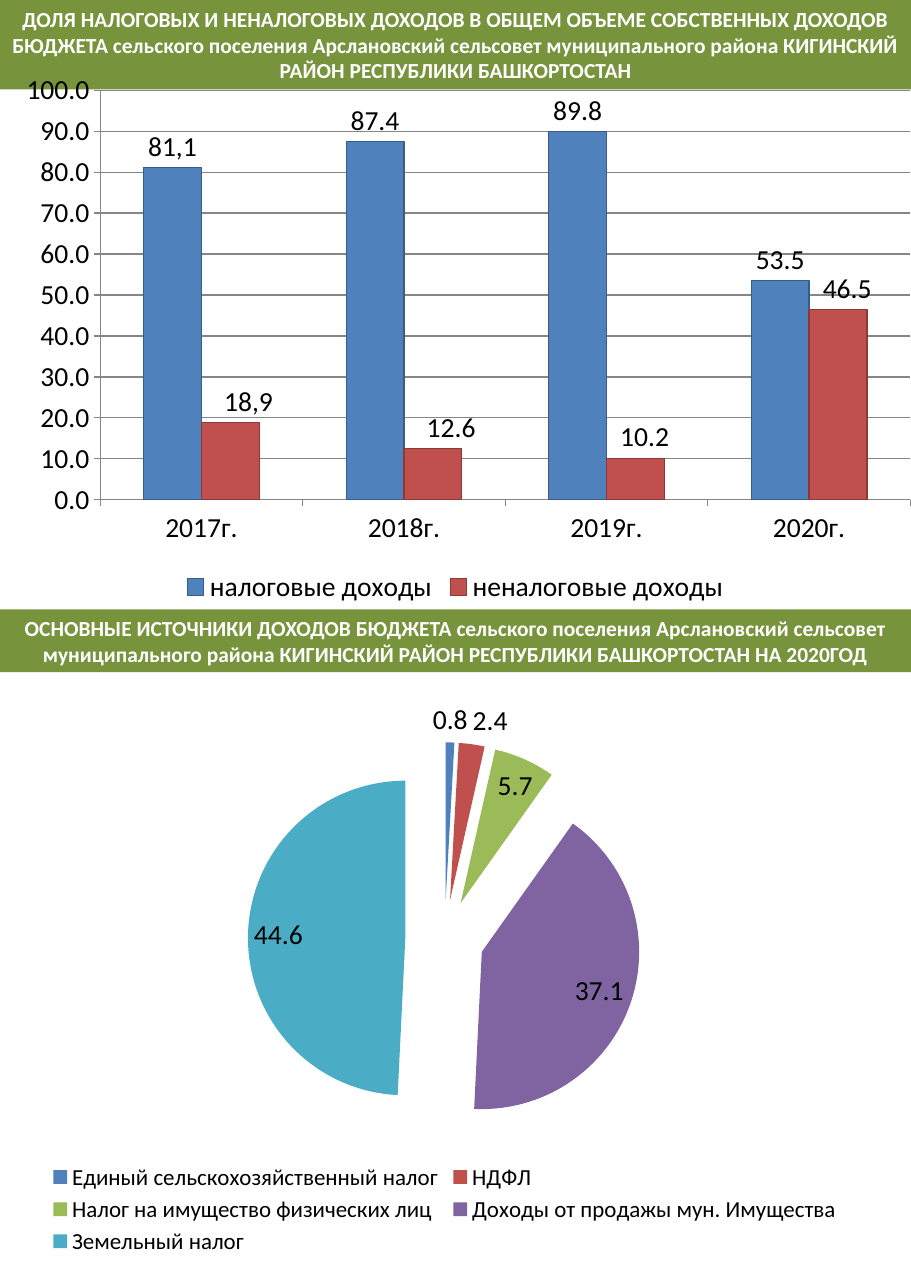
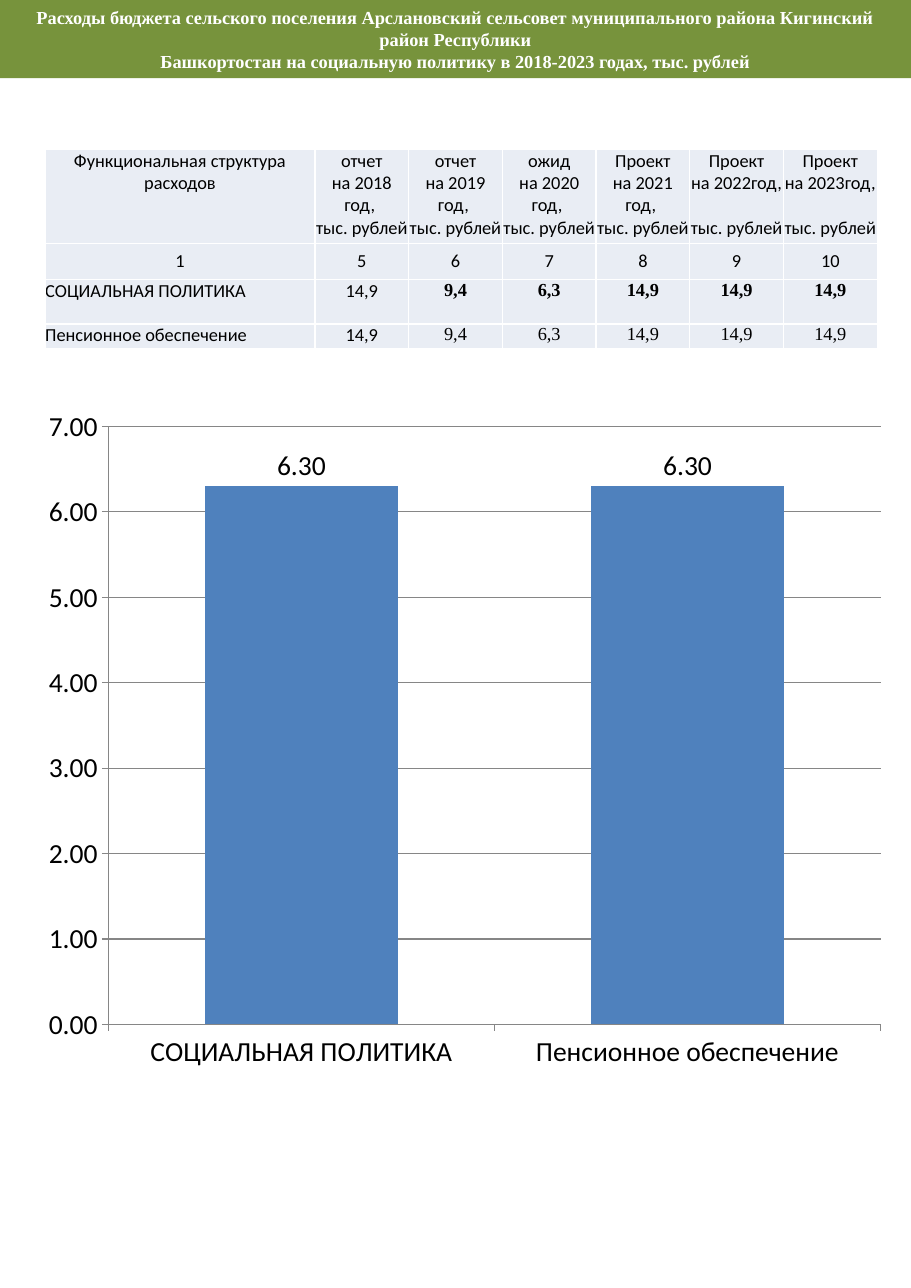
from copy import deepcopy

from pptx import Presentation
from pptx.chart.data import CategoryChartData
from pptx.dml.color import RGBColor
from pptx.enum.chart import XL_CHART_TYPE, XL_LABEL_POSITION, XL_LEGEND_POSITION
from pptx.enum.shapes import MSO_SHAPE
from pptx.enum.text import MSO_ANCHOR, MSO_AUTO_SIZE, PP_ALIGN
from pptx.oxml import parse_xml
from pptx.oxml.ns import nsdecls, qn
from pptx.util import Cm, Pt

BAND = "77933C"
WHITE = "FFFFFF"
BLACK = "000000"
GRID = "868686"
CELL = "E9EDF4"
BLUE = "4F81BD"
RED = "C0504D"
SANS = "Calibri"
SERIF = "Times New Roman"


def paint(fill, color):
    fill.solid()
    fill.fore_color.rgb = RGBColor.from_string(color)


def write_text(text_frame, text, size=12, font=SANS, color=BLACK, bold=False, align=PP_ALIGN.CENTER):
    text_frame.text = text
    for paragraph in text_frame.paragraphs:
        paragraph.alignment = align
        for run in paragraph.runs:
            run.font.size = Pt(size)
            run.font.name = font
            run.font.bold = bold
            paint(run.font.fill, color)
        for line_break in paragraph._p.findall(qn("a:br")):
            line_break.insert(0, deepcopy(paragraph.runs[0]._r.rPr))


presentation = Presentation()
presentation.slide_width = Cm(21)
presentation.slide_height = Cm(29.7)
title_only = presentation.slide_layouts[5]
income_slide = presentation.slides.add_slide(title_only)
spending_slide = presentation.slides.add_slide(title_only)

income_title = (
    "ДОЛЯ НАЛОГОВЫХ И НЕНАЛОГОВЫХ ДОХОДОВ В ОБЩЕМ ОБЪЕМЕ СОБСТВЕННЫХ ДОХОДОВ БЮДЖЕТА "
    "сельского поселения Арслановский сельсовет муниципального района "
    "КИГИНСКИЙ РАЙОН РЕСПУБЛИКИ БАШКОРТОСТАН"
)
sources_title = (
    "ОСНОВНЫЕ ИСТОЧНИКИ ДОХОДОВ БЮДЖЕТА сельского поселения Арслановский сельсовет "
    "муниципального района КИГИНСКИЙ РАЙОН РЕСПУБЛИКИ БАШКОРТОСТАН НА 2020ГОД"
)
spending_title = (
    "Расходы бюджета сельского поселения Арслановский сельсовет муниципального района "
    "Кигинский район Республики\n"
    "Башкортостан на социальную политику в 2018-2023 годах, тыс. рублей"
)
sources_band = income_slide.shapes.add_shape(MSO_SHAPE.RECTANGLE, 0, 0, Cm(21), Cm(1.45))
sources_band.shadow.inherit = False
sources_band.line.fill.background()

bands = [
    (income_slide.shapes.title, 0, 2.06, income_title, 14, SANS),
    (sources_band, 14.05, 1.45, sources_title, 14, SANS),
    (spending_slide.shapes.title, 0, 1.8, spending_title, 12, SERIF),
]
for shape, top, height, text, size, font in bands:
    shape.left, shape.top, shape.width, shape.height = 0, Cm(top), Cm(21), Cm(height)
    paint(shape.fill, BAND)
    text_frame = shape.text_frame
    text_frame.word_wrap = True
    text_frame.auto_size = MSO_AUTO_SIZE.NONE
    text_frame.vertical_anchor = MSO_ANCHOR.MIDDLE
    write_text(text_frame, text, size=size, font=font, color=WHITE, bold=True)

income_data = CategoryChartData(number_format="#,##0.0")
income_data.categories = ["2017г.", "2018г.", "2019г.", "2020г."]
income_data.add_series("налоговые доходы", [81.1, 87.4, 89.8, 53.5])
income_data.add_series("неналоговые доходы", [18.9, 12.6, 10.2, 46.5])

sources_data = CategoryChartData(number_format="General")
sources_data.categories = [
    "Единый сельскохозяйственный налог",
    "НДФЛ",
    "Налог на имущество физических лиц",
    "Доходы от продажы мун. Имущества",
    "Земельный налог",
]
sources_data.add_series("Доходы", [0.8, 2.4, 5.7, 37.1, 44.6])

spending_data = CategoryChartData(number_format="#,##0.00")
spending_data.categories = ["СОЦИАЛЬНАЯ ПОЛИТИКА", "Пенсионное обеспечение"]
spending_data.add_series("Расходы", [6.3, 6.3])

chart_places = [
    (income_slide, XL_CHART_TYPE.COLUMN_CLUSTERED, (0, 1.45, 21, 12.6), income_data),
    (income_slide, XL_CHART_TYPE.PIE, (0, 15.85, 20.5, 13.2), sources_data),
    (spending_slide, XL_CHART_TYPE.COLUMN_CLUSTERED, (0.7, 9.2, 20, 15.85), spending_data),
]
charts = []
for slide, chart_type, place, data in chart_places:
    chart = slide.shapes.add_chart(chart_type, *[Cm(length) for length in place], data).chart
    chart.has_title = False
    chart.has_legend = slide is income_slide
    chart.font.size = Pt(18)
    chart.font.name = SANS
    paint(chart.font.fill, BLACK)
    if chart.has_legend:
        chart.legend.position = XL_LEGEND_POSITION.BOTTOM
        chart.legend.include_in_layout = False
    charts.append(chart)
income_chart, sources_chart, spending_chart = charts

column_formats = [
    (income_chart, "#,##0.0", 100, 10, 150, (0.11, 0.05, 0.89, 0.75)),
    (spending_chart, "#,##0.00", 7, 1, 100, (0.09, 0.04, 0.89, 0.87)),
]
for chart, number_format, maximum, step, gap, (x, y, width, height) in column_formats:
    value_axis = chart.value_axis
    value_axis.minimum_scale = 0
    value_axis.maximum_scale = maximum
    value_axis.major_unit = step
    value_axis.has_major_gridlines = True
    value_axis.tick_labels.number_format = number_format
    value_axis.tick_labels.number_format_is_linked = False
    for line in (value_axis.format.line, value_axis.major_gridlines.format.line, chart.category_axis.format.line):
        line.width = Pt(0.75)
        paint(line.fill, GRID)
    plot = chart.plots[0]
    plot.gap_width = gap
    plot.overlap = 0
    plot.vary_by_categories = False
    for series, color in zip(plot.series, (BLUE, RED)):
        paint(series.format.fill, color)
        labels = series.data_labels
        labels.show_value = True
        labels.number_format = number_format
        labels.number_format_is_linked = False
        labels.position = XL_LABEL_POSITION.OUTSIDE_END
    plot_area = chart._chartSpace.chart.plotArea
    for layout in plot_area.findall(qn("c:layout")):
        plot_area.remove(layout)
    plot_area.insert(0, parse_xml(
        f'<c:layout {nsdecls("c")}><c:manualLayout><c:layoutTarget val="inner"/>'
        f'<c:xMode val="edge"/><c:yMode val="edge"/><c:x val="{x}"/><c:y val="{y}"/>'
        f'<c:w val="{width}"/><c:h val="{height}"/></c:manualLayout></c:layout>'
    ))

tax_series, other_series = income_chart.plots[0].series
for series, outline, text in [(tax_series, "385D8A", "81,1"), (other_series, "8C3836", "18,9")]:
    paint(series.format.line.fill, outline)
    series.format.line.width = Pt(0.75)
    label = series.points[0].data_label
    write_text(label.text_frame, text, size=18)
    label.position = XL_LABEL_POSITION.OUTSIDE_END
for index in range(1, 4):
    label = other_series.points[index].data_label
    label.font.size = Pt(18)
    label.position = XL_LABEL_POSITION.OUTSIDE_END
for label_element, shift in zip(other_series._element.findall(".//" + qn("c:dLbl")), (0.02, 0.02, 0.01, 0.01)):
    label_element[0].addnext(parse_xml(
        f'<c:layout {nsdecls("c")}><c:manualLayout><c:x val="{shift}"/><c:y val="0"/>'
        f'</c:manualLayout></c:layout>'
    ))

sources_chart.legend.font.size = Pt(15)
sources_plot = sources_chart.plots[0]
sources_plot.vary_by_categories = True
sources_series = sources_plot.series[0]
for index, color in enumerate((BLUE, RED, "9BBB59", "8064A2", "4BACC6")):
    paint(sources_series.points[index].format.fill, color)
sources_series._element.find(qn("c:dPt")).addprevious(
    parse_xml(f'<c:explosion {nsdecls("c")} val="25"/>')
)
sources_series.data_labels.show_value = True
sources_series.data_labels.show_percentage = False
sources_series.data_labels.position = XL_LABEL_POSITION.BEST_FIT

headings = ["Функциональная структура расходов"]
for state, year in [
    ("отчет", "2018 "),
    ("отчет", "2019 "),
    ("ожид", "2020 "),
    ("Проект", "2021 "),
    ("Проект", "2022"),
    ("Проект", "2023"),
]:
    headings.append(f"{state}\vна {year}год, \vтыс. рублей")
amounts = ["14,9", "9,4", "6,3", "14,9", "14,9", "14,9"]
rows = [
    headings,
    ["1", "5", "6", "7", "8", "9", "10"],
    ["СОЦИАЛЬНАЯ ПОЛИТИКА", *amounts],
    ["Пенсионное обеспечение", *amounts],
]
row_heights = [2.16, 0.84, 1.02, 0.56]
column_widths = [6.22] + [2.16] * 6
table = spending_slide.shapes.add_table(
    len(rows), len(column_widths), Cm(1.04), Cm(3.45), Cm(sum(column_widths)), Cm(sum(row_heights))
).table
table.first_row = False
table.horz_banding = False
for column, width in zip(table.columns, column_widths):
    column.width = Cm(width)
for row_index, (row, height) in enumerate(zip(rows, row_heights)):
    table.rows[row_index].height = Cm(height)
    for column_index, text in enumerate(row):
        cell = table.cell(row_index, column_index)
        cell.margin_left = cell.margin_right = cell.margin_top = cell.margin_bottom = 0
        cell.vertical_anchor = MSO_ANCHOR.MIDDLE if row_index == 1 else MSO_ANCHOR.TOP
        paint(cell.fill, CELL)
        serif = row_index > 1 and column_index > 1
        write_text(
            cell.text_frame,
            text,
            font=SERIF if serif else SANS,
            bold=serif and row_index == 2,
            align=PP_ALIGN.LEFT if row_index > 1 and column_index == 0 else PP_ALIGN.CENTER,
        )
        for position, side in enumerate(("lnL", "lnR", "lnT", "lnB")):
            cell._tc.tcPr.insert(position, parse_xml(
                f'<a:{side} {nsdecls("a")} w="12700"><a:solidFill><a:srgbClr val="{WHITE}"/>'
                f'</a:solidFill></a:{side}>'
            ))

presentation.save("out.pptx")
